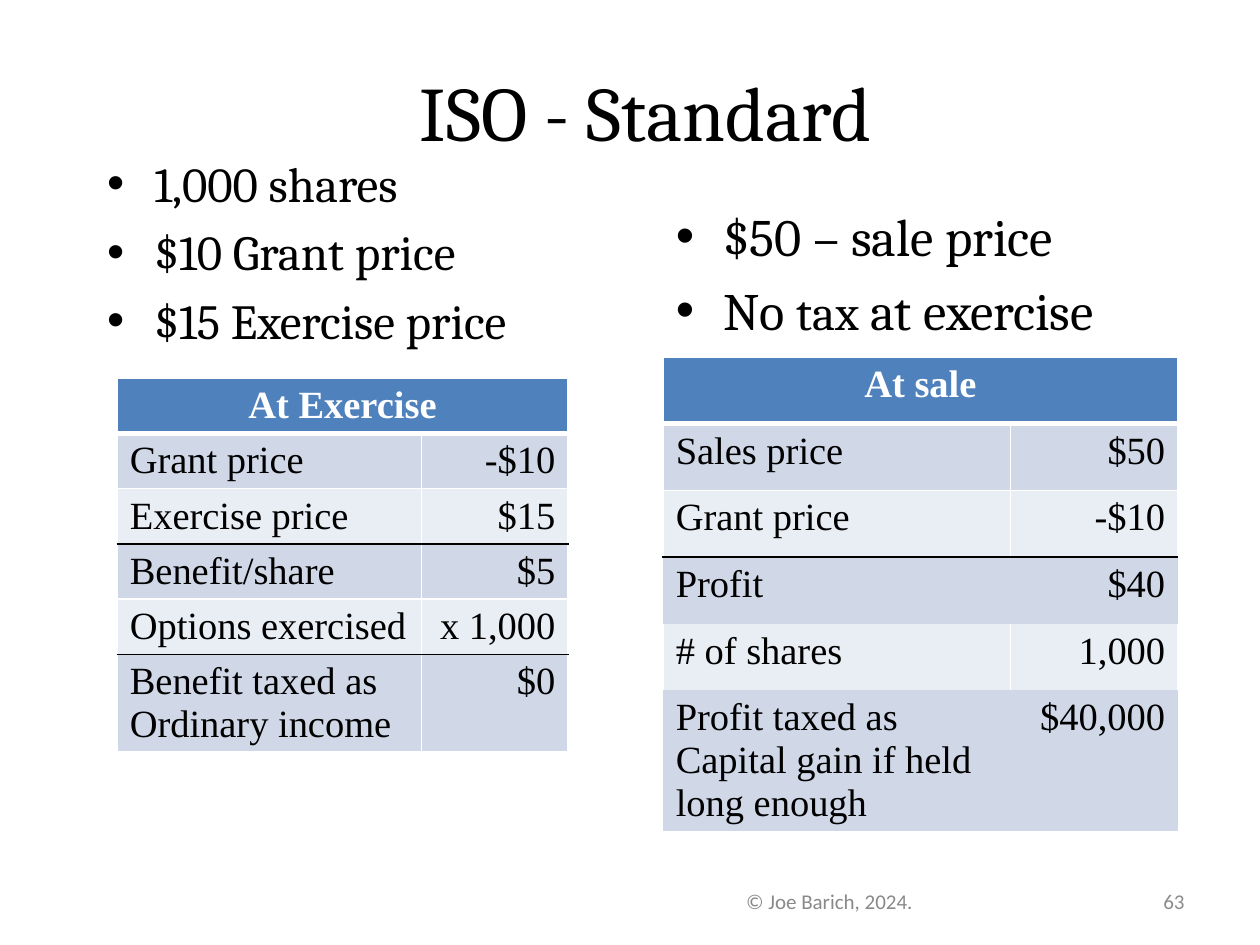
from pptx import Presentation
from pptx.dml.color import RGBColor
from pptx.enum.text import MSO_ANCHOR, PP_ALIGN as AL
from pptx.oxml.ns import qn
from pptx.util import Pt
from lxml.etree import SubElement as Sub

THEME = {
    "serif": "Cambria", "table": "Times New Roman", "sans": "Calibri",
    "title": 44, "left": 28, "right": 30, "cell": 22, "small": 12,
    "black": "000000", "white": "FFFFFF", "head": "4F81BD",
    "bands": ("D0D8E8", "E9EDF4"), "footer": "898989", "number": "8C8C8C",
}
W, K = THEME["white"], THEME["black"]


def style(p, font, size, color, bold=False):
    for r in p.runs:
        r.font.name, r.font.size, r.font.bold = font, Pt(size), bold
        r.font.color.rgb = RGBColor.from_string(color)


def set_borders(cell, sides, top, bottom, bottom_width=1):
    tcPr = cell._tc.get_or_add_tcPr()
    edges = (("L", sides, 1), ("R", sides, 1), ("T", top, 1), ("B", bottom, bottom_width))
    for edge, color, width in edges:
        ln = Sub(tcPr, qn("a:ln" + edge), w=str(Pt(width)))
        if color:
            Sub(Sub(ln, qn("a:solidFill")), qn("a:srgbClr"), val=color)
        else:
            Sub(ln, qn("a:noFill"))


prs = Presentation()
prs.slide_width, prs.slide_height = Pt(720), Pt(540)
s = prs.slides.add_slide(prs.slide_layouts[3])
title, left_list, right_list = s.placeholders

# Title
title.left, title.top, title.width, title.height = Pt(42), Pt(12), Pt(654), Pt(102)
title.text_frame.text = "ISO - Standard"
style(title.text_frame.paragraphs[0], THEME["serif"], THEME["title"], K)

# Bullet lists; each item is a list of runs
lists = (
    (left_list, (54, 84, 276, 416), THEME["left"],
     (["1,000 shares"], ["$10 Grant price"], ["$15 Exercise price"])),
    (right_list, (379, 113, 312, 342), THEME["right"],
     (["$50 – sale price"], ["No ", "tax", " at exercise"])),
)
for sp, box, size, items in lists:
    sp.left, sp.top, sp.width, sp.height = map(Pt, box)
    tf = sp.text_frame
    for i, runs in enumerate(items):
        p = tf.paragraphs[0] if i == 0 else tf.add_paragraph()
        for text in runs:
            p.add_run().text = text
        p.space_before = Pt(0.2 * size if i else 0)
        style(p, THEME["serif"], size, K)
right_list.text_frame.paragraphs[1].runs[1].font.size = Pt(THEME["left"])

# Tables: heading, place, columns, row height, last row height,
# then rows of label, value and the side, top and bottom border colours
tables = (
    ("At sale", (379, 204), (198.5, 95.5), 38.1, 80.5, (
        ("Sales price", "$50", W, W, W),
        ("Grant price", "-$10", W, W, K),
        ("Profit", "$40", None, K, None),
        ("# of shares", "1,000", W, None, None),
        ("Profit taxed as Capital gain if held long enough", "$40,000", None, None, None))),
    ("At Exercise", (67, 216), (174, 83.5), 31.5, 55, (
        ("Grant price", "-$10", W, W, W),
        ("Exercise price", "$15", W, W, K),
        ("Benefit/share", "$5", W, K, W),
        ("Options exercised", "x 1,000", W, W, K),
        ("Benefit taxed as Ordinary income", "$0", W, K, W))),
)
for heading, (x, y), columns, row_h, last_h, rows in tables:
    heights = [row_h] * len(rows) + [last_h]
    table = s.shapes.add_table(len(heights), 2, Pt(x), Pt(y),
                               Pt(sum(columns)), Pt(sum(heights))).table
    table.horz_banding = False
    for column, width in zip(table.columns, columns):
        column.width = Pt(width)
    for row, height in zip(table.rows, heights):
        row.height = Pt(height)

    # Heading row
    head = table.cell(0, 0)
    head.merge(table.cell(0, 1))
    head.text_frame.text = heading
    p = head.text_frame.paragraphs[0]
    p.alignment = AL.CENTER
    style(p, THEME["table"], THEME["cell"], W, bold=True)
    for cell in table.rows[0].cells:
        set_borders(cell, W, W, W, 3)
        cell.fill.solid()
        cell.fill.fore_color.rgb = RGBColor.from_string(THEME["head"])

    # Banded rows
    for i, (label, value, *borders) in enumerate(rows):
        for j, (text, align) in enumerate(((label, AL.LEFT), (value, AL.RIGHT))):
            cell = table.cell(i + 1, j)
            set_borders(cell, *borders)
            cell.fill.solid()
            cell.fill.fore_color.rgb = RGBColor.from_string(THEME["bands"][i % 2])
            cell.text_frame.text = text
            p = cell.text_frame.paragraphs[0]
            p.alignment = align
            style(p, THEME["table"], THEME["cell"], K)

# Footer and slide number
for text, x, width, align, color in (
        ("© Joe Barich, 2024.", 360, 228, AL.CENTER, THEME["footer"]),
        ("63", 600, 84, AL.RIGHT, THEME["number"])):
    tf = s.shapes.add_textbox(Pt(x), Pt(500.5), Pt(width), Pt(28.75)).text_frame
    tf.word_wrap = True
    tf.vertical_anchor = MSO_ANCHOR.MIDDLE
    tf.text = text
    tf.paragraphs[0].alignment = align
    style(tf.paragraphs[0], THEME["sans"], THEME["small"], color)

prs.save("out.pptx")
